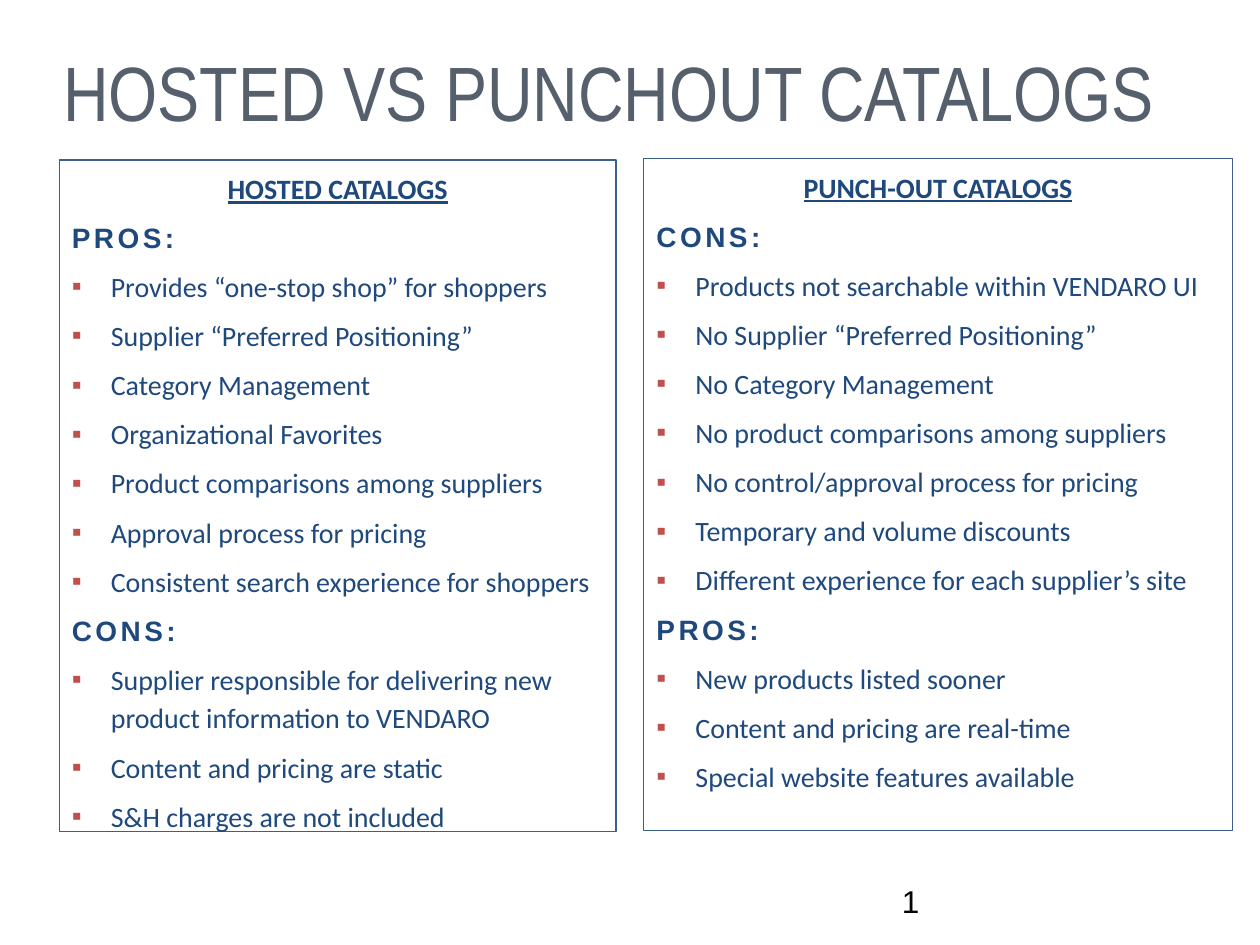
from lxml.etree import SubElement
from pptx import Presentation
from pptx.dml.color import RGBColor
from pptx.enum.text import MSO_ANCHOR, MSO_AUTO_SIZE, PP_ALIGN
from pptx.oxml.ns import qn
from pptx.util import Inches, Pt

WIDE, HIGH = Inches(10), Inches(7.5)
NAVY, EDGE, RED, GREY, BLACK = "1F497D", "3A5F8C", "C0504D", "55606C", "000000"

HOSTED = {
    "PROS:": [
        "Provides “one-stop shop” for shoppers",
        "Supplier “Preferred Positioning”",
        "Category Management",
        "Organizational Favorites",
        "Product comparisons among suppliers",
        "Approval process for pricing",
        "Consistent search experience for shoppers",
    ],
    "CONS:": [
        "Supplier responsible for delivering new product information to VENDARO",
        "Content and pricing are static",
        "S&H charges are not included",
    ],
}
PUNCH = {
    "CONS:": [
        "Products not searchable within VENDARO UI",
        "No Supplier “Preferred Positioning”",
        "No Category Management",
        "No product comparisons among suppliers",
        "No control/approval process for pricing",
        "Temporary and volume discounts",
        "Different experience for each supplier’s site",
    ],
    "PROS:": [
        "New products listed sooner",
        "Content and pricing are real-time",
        "Special website features available",
    ],
}


def color(code):
    return RGBColor.from_string(code)


def area(left, top, width, height):
    """Turn percentages of the slide's size into lengths."""
    return (int(WIDE * left / 100), int(HIGH * top / 100),
            int(WIDE * width / 100), int(HIGH * height / 100))


def place(shape, box):
    shape.left, shape.top, shape.width, shape.height = area(*box)


def style(para, font, size, code, bold=False, line=False):
    for run in para.runs:
        face = run.font
        face.name, face.size, face.bold, face.underline = font, Pt(size), bold, line
        face.color.rgb = color(code)


def indent(para, inches, mark=None):
    """Set the paragraph's spacing and hanging indent, with or without a bullet."""
    para.line_spacing = 1.15
    para.space_before = para.space_after = Pt(3)
    props = para._p.get_or_add_pPr()
    props.set("marL", str(Inches(inches)))
    props.set("indent", str(-Inches(inches)))
    if mark:
        SubElement(SubElement(props, qn("a:buClr")), qn("a:srgbClr"), val=RED)
        SubElement(props, qn("a:buFont"), typeface="Arial")
        SubElement(props, qn("a:buChar"), char=mark)
    else:
        SubElement(props, qn("a:buNone"))


def add_title(slide, text, box):
    title = slide.shapes.title
    place(title, box)
    frame = title.text_frame
    frame.text = text
    frame.auto_size = MSO_AUTO_SIZE.NONE
    frame.vertical_anchor = MSO_ANCHOR.TOP
    frame.margin_top = Inches(0.1)
    para = frame.paragraphs[0]
    para.alignment = PP_ALIGN.LEFT
    style(para, "Arial Narrow", 44, GREY)


def add_panel(panel, head, groups, box):
    """Fill a framed column with a heading and its groups of bullets."""
    place(panel, box)
    panel.line.color.rgb = color(EDGE)
    panel.line.width = Pt(0.75)
    lines = [head]
    for label, items in groups.items():
        lines += [label, *items]
    frame = panel.text_frame
    frame.text = "\n".join(lines)
    frame.auto_size = MSO_AUTO_SIZE.NONE
    frame.vertical_anchor = MSO_ANCHOR.TOP
    for para in frame.paragraphs:
        para.alignment = PP_ALIGN.LEFT
        if para.text == head:
            para.alignment = PP_ALIGN.CENTER
            indent(para, 0.26)
            style(para, "Calibri", 16, NAVY, bold=True, line=True)
        elif para.text in groups:
            indent(para, 0.26)
            style(para, "Arial", 16, NAVY, bold=True)
            para.runs[0].font._element.set("spc", "200")
        else:
            indent(para, 0.31, "▪")
            style(para, "Calibri", 16, NAVY)


def add_number(slide, text, box):
    frame = slide.shapes.add_textbox(*area(*box)).text_frame
    frame.word_wrap = True
    frame.text = text
    style(frame.paragraphs[0], "Arial", 18, BLACK)


def main():
    deck = Presentation()
    deck.slide_width, deck.slide_height = WIDE, HIGH
    slide = deck.slides.add_slide(deck.slide_layouts[3])
    left, right = slide.placeholders[1], slide.placeholders[2]
    add_title(slide, "HOSTED VS PUNCHOUT CATALOGS", (4, 3.33, 94.2, 15.2))
    add_number(slide, "1", (70.6, 92.67, 22.5, 5.33))
    add_panel(left, "HOSTED CATALOGS", HOSTED, (4.7, 16.93, 44.2, 71.07))
    add_panel(right, "PUNCH-OUT CATALOGS", PUNCH, (51.1, 16.8, 46.7, 71.07))
    deck.save("out.pptx")


if __name__ == "__main__":
    main()
